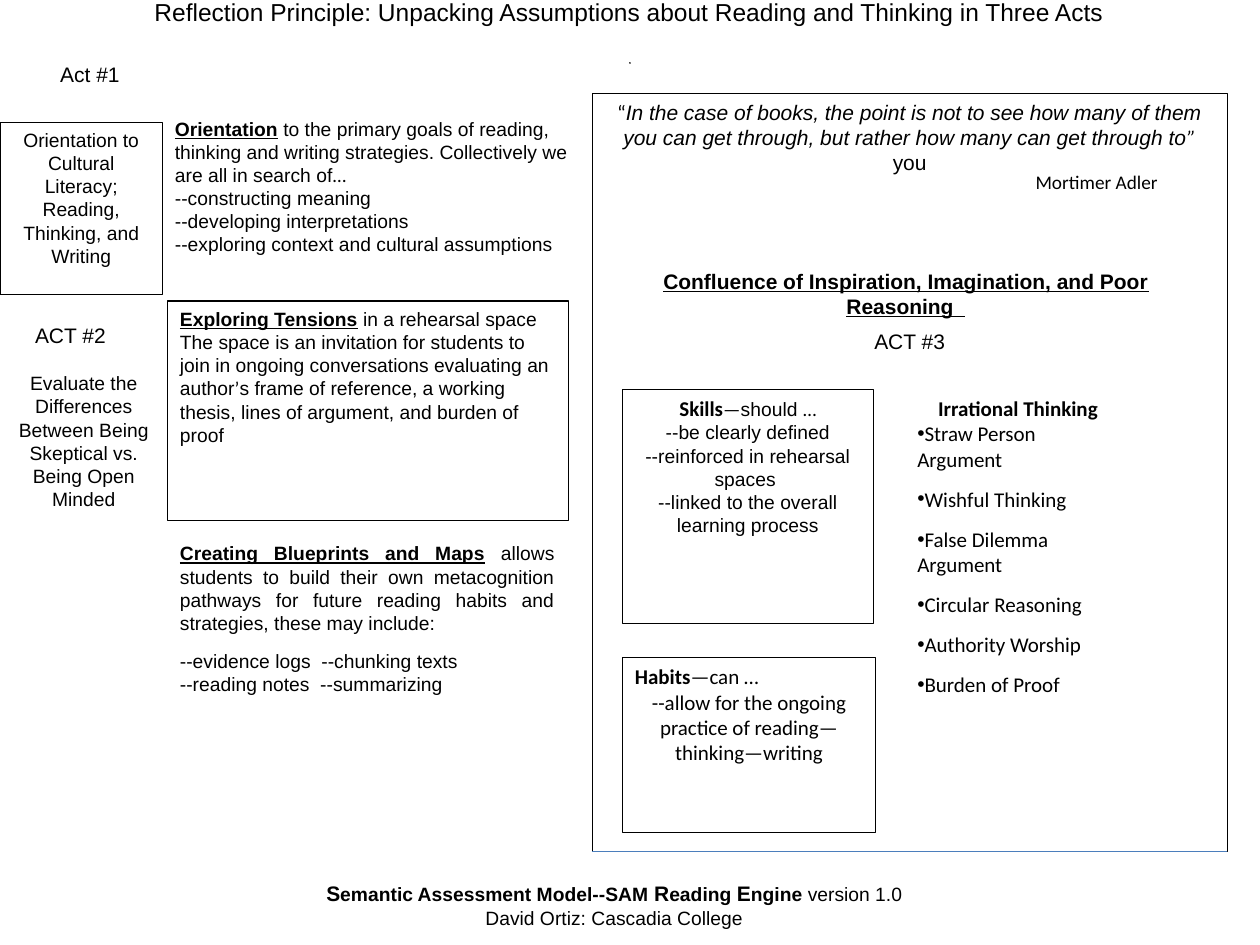
import pptx
import pptx.util
import pptx.dml.color
import pptx.enum.shapes
import pptx.enum.text
import lxml.etree

Pt = pptx.util.Pt
ALIGN = pptx.enum.text.PP_ALIGN
ANCHOR = pptx.enum.text.MSO_ANCHOR

SANS, HUMANIST = "Arial", "Calibri"
THEME = {
    "ink": pptx.dml.color.RGBColor.from_string("000000"),
    "paper": pptx.dml.color.RGBColor.from_string("FFFFFF"),
    "rule": pptx.dml.color.RGBColor.from_string("4B7EBC"),
    "line": Pt(0.75),
    "gap": Pt(8.5),
    "formats": {
        "title": {"name": SANS, "size": Pt(14)},
        "act": {"name": SANS, "size": Pt(12)},
        "quote": {"name": SANS, "size": Pt(12), "italic": True},
        "quote mark": {"name": HUMANIST, "size": Pt(12), "italic": True},
        "open mark": {"name": HUMANIST, "size": Pt(12)},
        "text": {"name": SANS, "size": Pt(11)},
        "lead": {"name": SANS, "size": Pt(11), "bold": True, "underline": True},
        "heading": {"name": SANS, "size": Pt(12), "bold": True, "underline": True},
        "initial": {"name": SANS, "size": Pt(12), "bold": True},
        "strong": {"name": SANS, "size": Pt(11), "bold": True},
        "symbol": {"name": HUMANIST, "size": Pt(11)},
        "list": {"name": HUMANIST, "size": Pt(12)},
        "list heading": {"name": HUMANIST, "size": Pt(12), "bold": True},
    },
}

presentation = pptx.Presentation()
presentation.slide_width = pptx.util.Inches(10)
presentation.slide_height = pptx.util.Inches(7.5)
slide = presentation.slides.add_slide(presentation.slide_layouts[1])
COLUMN = presentation.slide_width / 100
ROW = presentation.slide_height / 75


def place(shape, left, top, width, height):
    """Position a shape in columns and rows of the 100 by 75 grid."""
    geometry = {"left": left * COLUMN, "top": top * ROW,
                "width": width * COLUMN, "height": height * ROW}
    for name, value in geometry.items():
        setattr(shape, name, round(value))


def write(shape, paragraphs, anchor=ANCHOR.TOP):
    """Fill a shape with (alignment, space after, [(text, format), ...]) paragraphs."""
    frame = shape.text_frame
    frame.word_wrap = True
    frame.auto_size = pptx.enum.text.MSO_AUTO_SIZE.NONE
    frame.vertical_anchor = anchor
    for index, (alignment, space_after, runs) in enumerate(paragraphs):
        paragraph = frame.add_paragraph() if index else frame.paragraphs[0]
        paragraph.alignment = alignment
        paragraph.space_before = Pt(0)
        paragraph.space_after = space_after
        for text, format_name in runs:
            run = paragraph.add_run()
            run.text = text
            run.font.color.rgb = THEME["ink"]
            for name, value in THEME["formats"][format_name].items():
                setattr(run.font, name, value)


LEFT, CENTER, JUSTIFY = ALIGN.LEFT, ALIGN.CENTER, ALIGN.JUSTIFY
NONE, GAP = Pt(0), THEME["gap"]

place(slide.shapes.title, 5.3, -0.7, 89.3, 3.6)
write(slide.shapes.title, [(CENTER, NONE, [(
    "Reflection Principle: Unpacking Assumptions about Reading and Thinking in Three Acts", "title")])])

# Left, top, width, height, outline colour, paragraphs; from back to front.
boxes = [
    (47, 7.4, 50.4, 60.2, "ink", [(CENTER, NONE, [
        ("“", "open mark"),
        ("In the case of books, the point is not to see how many of them you can get through, "
         "but rather how many can get through to", "quote"),
        ("”", "quote mark"), (" you", "act")])]),
    (0.2, 69.4, 97.1, 4.4, "paper", [
        (CENTER, NONE, [
            ("S", "initial"), ("emantic Assessment Model--SAM ", "strong"),
            ("R", "initial"), ("eading ", "strong"),
            ("E", "initial"), ("ngine", "strong"), (" version 1.0", "text")]),
        (CENTER, NONE, [("David Ortiz: Cascadia College", "text")])]),
    (12.9, 8.8, 33.7, 19.2, "paper", [
        (LEFT, NONE, [
            ("Orientation", "lead"),
            (" to the primary goals of reading, thinking and writing strategies. "
             "Collectively we are all in search of", "text"),
            ("…", "symbol")]),
        (LEFT, NONE, [("--constructing meaning", "text")]),
        (LEFT, NONE, [("--developing interpretations", "text")]),
        (LEFT, NONE, [("--exploring context and cultural assumptions", "text")])]),
    (3.8, 4.4, 9.6, 4, "paper", [(LEFT, NONE, [("Act #1", "act")])]),
    (0, 9.7, 12.9, 13.7, "ink", [(CENTER, NONE, [
        ("Orientation to Cultural Literacy; Reading, Thinking, and Writing", "text")])]),
    (1.8, 25.1, 9.6, 4.1, "paper", [(LEFT, NONE, [("ACT #2", "act")])]),
    (0.2, 29, 12.9, 12.5, "paper", [(CENTER, NONE, [
        ("Evaluate the Differences Between Being Skeptical vs. Being Open Minded", "text")])]),
    (13.3, 23.9, 31.8, 17.4, "ink", [
        (LEFT, NONE, [("Exploring Tensions", "lead"), (" in a rehearsal space", "text")]),
        (LEFT, NONE, [
            ("The space is an invitation for students to join in ongoing conversations "
             "evaluating an author", "text"),
            ("’", "symbol"),
            ("s frame of reference, a working thesis, lines of argument, and burden of proof",
             "text")])]),
    (48.5, 20.8, 46.8, 45.3, "paper", [(CENTER, NONE, [
        ("Confluence of Inspiration, Imagination, and Poor Reasoning  ", "heading")])]),
    (66.2, 25.6, 12, 4.7, "paper", [(CENTER, NONE, [("ACT #3", "act")])]),
    (49.4, 30.9, 19.9, 18.6, "ink", [
        (CENTER, NONE, [("Skills", "list heading"), ("—", "symbol"),
                        ("should ", "text"), ("…", "symbol")]),
        (CENTER, NONE, [("--be clearly defined", "text")]),
        (CENTER, NONE, [("--reinforced in rehearsal spaces ", "text")]),
        (CENTER, NONE, [("--linked to the overall learning process", "text")])]),
    (49.4, 52.2, 20.1, 13.9, "ink", [
        (LEFT, NONE, [("Habits", "list heading"), ("—can …", "list")]),
        (CENTER, NONE, [
            ("--allow for the ongoing practice of reading—thinking—writing", "list")])]),
    (81.2, 13, 14.2, 3.5, "paper", [(LEFT, NONE, [("Mortimer Adler", "symbol")])]),
    (13.3, 42.5, 31.7, 17.7, "paper", [
        (JUSTIFY, GAP, [
            ("Creating Blueprints and Maps", "lead"),
            (" allows students to build their own metacognition pathways for future reading "
             "habits and strategies, these may include:", "text")]),
        (JUSTIFY, NONE, [("--evidence logs  --chunking texts", "text")]),
        (JUSTIFY, NONE, [("--reading notes  --summarizing ", "text")])]),
    (50, 5, 0, 0, "ink", []),
]
for left, top, width, height, outline, paragraphs in boxes:
    box = slide.shapes.add_shape(pptx.enum.shapes.MSO_SHAPE.RECTANGLE, 0, 0, 0, 0)
    place(box, left, top, width, height)
    box.shadow.inherit = False
    box.fill.solid()
    box.fill.fore_color.rgb = THEME["paper"]
    box.line.color.rgb = THEME[outline]
    box.line.width = THEME["line"]
    write(box, paragraphs)

fallacies = slide.placeholders[1]
place(fallacies, 71.8, 30.9, 18, 35.1)
write(fallacies, [(CENTER, NONE, [("Irrational Thinking", "list heading")])] + [
    (LEFT, space_after, [(text, "list")]) for text, space_after in [
        ("Straw Person", NONE), ("Argument", GAP), ("Wishful Thinking", GAP),
        ("False Dilemma Argument", GAP), ("Circular Reasoning", GAP),
        ("Authority Worship", GAP), ("Burden of Proof", NONE)]])
DRAWING = "{http://schemas.openxmlformats.org/drawingml/2006/main}"
for paragraph in fallacies.text_frame.paragraphs:
    properties = paragraph._p.get_or_add_pPr()
    properties.set("marL", "0")
    properties.set("indent", "0")
    if paragraph.text in ("Irrational Thinking", "Argument"):
        lxml.etree.SubElement(properties, DRAWING + "buNone")
    else:
        lxml.etree.SubElement(properties, DRAWING + "buChar", char="•")
# The list stands in front of the white panels.
fallacies.element.getparent().append(fallacies.element)

base_line = slide.shapes.add_connector(
    pptx.enum.shapes.MSO_CONNECTOR.STRAIGHT,
    round(47 * COLUMN), round(67.6 * ROW), round(97.4 * COLUMN), round(67.6 * ROW))
base_line.line.color.rgb = THEME["rule"]
base_line.line.width = THEME["line"]
lxml.etree.SubElement(base_line.element.spPr, DRAWING + "effectLst")

presentation.save("out.pptx")
